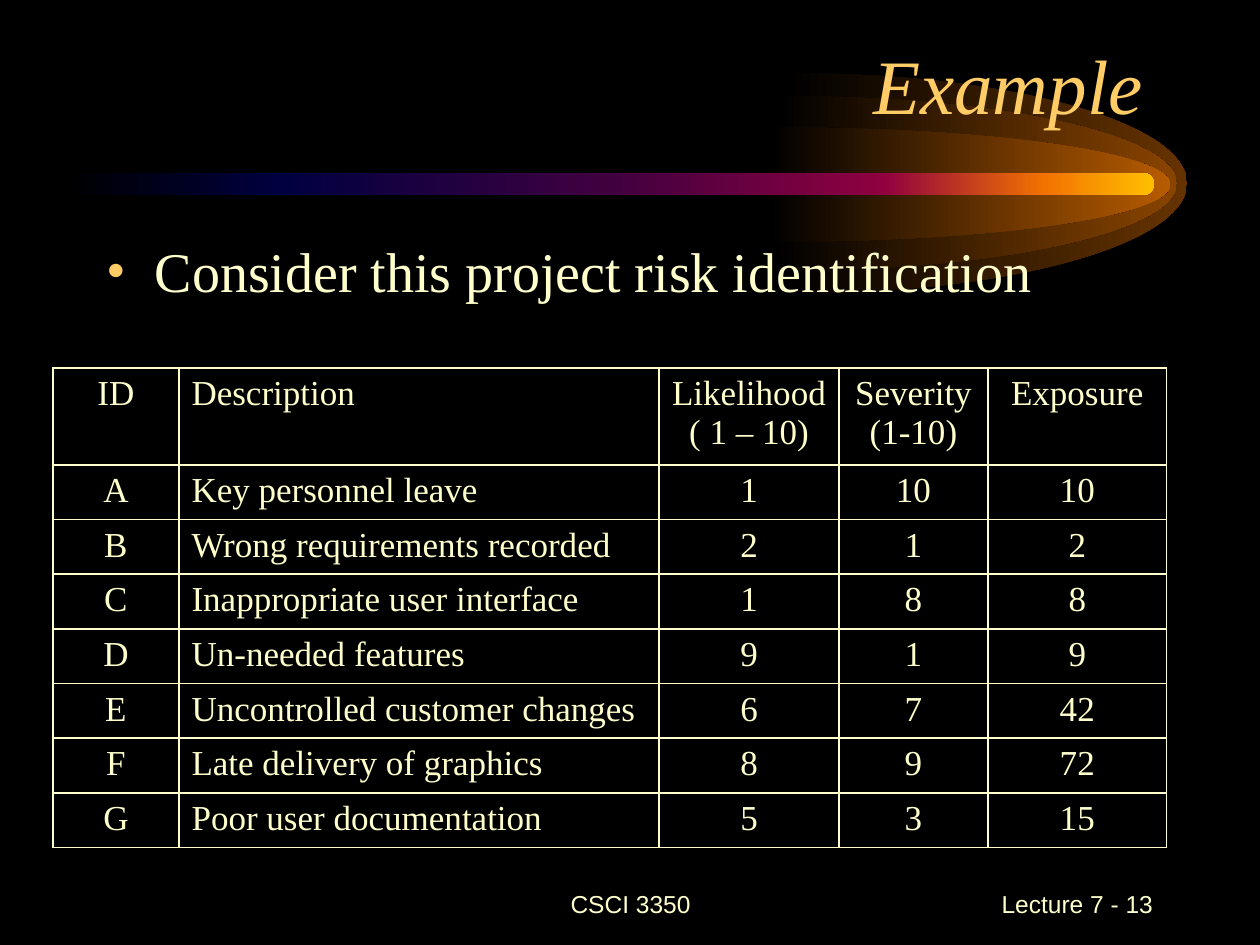
from dataclasses import dataclass

from lxml.etree import SubElement
from pptx import Presentation
from pptx.dml.color import RGBColor
from pptx.enum.shapes import MSO_SHAPE
from pptx.enum.text import MSO_ANCHOR, PP_ALIGN
from pptx.oxml.ns import qn
from pptx.util import Inches, Pt


@dataclass(frozen=True)
class Theme:
    background: str = "000000"
    text: str = "FFFFCC"
    accent: str = "FFCC66"
    halos: tuple = ("663300", "894400", "B75B00")
    beam: tuple = ((0, "000000"), (20, "000040"), (50, "400040"),
                   (75, "8F0040"), (90, "F27300"), (100, "FFBF00"))
    serif: str = "Times New Roman"
    sans: str = "Arial"
    title_size: int = 44
    body_size: int = 32
    table_size: int = 20
    footer_size: int = 14


THEME = Theme()
ELLIPSE_HANDLE = 0.55
HALO_BOXES = ((6.24, 0.58, 3.18, 1.75), (6.16, 0.76, 3.18, 1.39), (6.11, 1.01, 3.18, 0.91))
COLUMN_WIDTHS = (1, 3.81, 1.43, 1.18, 1.42)
HEADER_HEIGHT = 0.77
RISKS = (
    ("ID", "Description", "Likelihood\n( 1 – 10)", "Severity\n(1-10)", "Exposure"),
    ("A", "Key personnel leave", "1", "10", "10"),
    ("B", "Wrong requirements recorded", "2", "1", "2"),
    ("C", "Inappropriate user interface", "1", "8", "8"),
    ("D", "Un-needed features", "9", "1", "9"),
    ("E", "Uncontrolled customer changes", "6", "7", "42"),
    ("F", "Late delivery of graphics", "8", "9", "72"),
    ("G", "Poor user documentation", "5", "3", "15"),
)


def style_text(frame, size, font, color, align):
    for paragraph in frame.paragraphs:
        paragraph.alignment = align
        paragraph.font.size = Pt(size)
        paragraph.font.name = font
        paragraph.font.color.rgb = RGBColor.from_string(color)


def add_text(slide, box, text, size, font, color, align, anchor):
    frame = slide.shapes.add_textbox(*map(Inches, box)).text_frame
    frame.word_wrap = True
    frame.vertical_anchor = anchor
    frame.text = text
    style_text(frame, size, font, color, align)
    return frame.paragraphs[0]


def paint_gradient(shape, stops):
    shape.shadow.inherit = False
    shape.line.fill.background()
    shape.fill.gradient()
    shape.fill.gradient_angle = 0
    stop_list = shape.fill._xPr.find(qn("a:gradFill")).find(qn("a:gsLst"))
    stop_list.clear()
    for position, color in stops:
        stop = SubElement(stop_list, qn("a:gs"), pos=str(position * 1000))
        SubElement(stop, qn("a:srgbClr"), val=color)


def bend(segment, handles):
    end = segment[0]
    segment.tag = qn("a:cubicBezTo")
    for x, y in handles:
        end.addprevious(end.makeelement(qn("a:pt"), x=str(Inches(x)), y=str(Inches(y))))


def add_halo(slide, box, color):
    left, top, width, height = box
    notch, middle = 0.05, height / 2
    corners = ((width, middle), (notch, height), (0, height), (notch, middle))
    builder = slide.shapes.build_freeform(Inches(left + notch), Inches(top))
    builder.add_line_segments([(Inches(left + x), Inches(top + y)) for x, y in corners])
    halo = builder.convert_to_shape()
    reach_x = notch + (width - notch) * ELLIPSE_HANDLE
    reach_y = middle * ELLIPSE_HANDLE
    upper, lower = list(halo._element.iter(qn("a:lnTo")))[:2]
    bend(upper, ((reach_x, 0), (width, middle - reach_y)))
    bend(lower, ((width, middle + reach_y), (reach_x, height)))
    paint_gradient(halo, ((0, THEME.background), (100, color)))


def add_comet(slide, beam_box):
    for halo_box, color in zip(HALO_BOXES, THEME.halos):
        add_halo(slide, halo_box, color)
    beam = slide.shapes.add_shape(MSO_SHAPE.ROUNDED_RECTANGLE, *map(Inches, beam_box))
    beam.adjustments[0] = 0.5
    paint_gradient(beam, THEME.beam)


def add_title(slide, box, text):
    title = add_text(slide, box, text, THEME.title_size, THEME.serif, THEME.accent,
                     PP_ALIGN.RIGHT, MSO_ANCHOR.BOTTOM)
    title.font.italic = True


def add_bullet(slide, box, text):
    point = add_text(slide, box, text, THEME.body_size, THEME.serif, THEME.text,
                     PP_ALIGN.LEFT, MSO_ANCHOR.TOP)
    point.space_before = Pt(THEME.body_size * 0.2)
    properties = point._p.get_or_add_pPr()
    properties.set("marL", str(Inches(0.38)))
    properties.set("indent", str(Inches(-0.38)))
    bullet_color = SubElement(properties, qn("a:buClr"))
    SubElement(bullet_color, qn("a:srgbClr"), val=THEME.accent)
    SubElement(properties, qn("a:buFont"), typeface=THEME.serif)
    SubElement(properties, qn("a:buChar"), char="•")
    properties.append(properties.find(qn("a:defRPr")))


def add_borders(cell):
    properties = cell._tc.get_or_add_tcPr()
    for side in ("lnL", "lnR", "lnT", "lnB"):
        border = SubElement(properties, qn(f"a:{side}"), w=str(Pt(1)))
        fill = SubElement(border, qn("a:solidFill"))
        SubElement(fill, qn("a:srgbClr"), val=THEME.text)


def add_risk_table(slide, box):
    table = slide.shapes.add_table(len(RISKS), len(COLUMN_WIDTHS), *map(Inches, box)).table
    table.first_row = table.horz_banding = False
    for column, width in zip(table.columns, COLUMN_WIDTHS):
        column.width = Inches(width)
    risk_height = (box[3] - HEADER_HEIGHT) / (len(RISKS) - 1)
    for row_index, (row, values) in enumerate(zip(table.rows, RISKS)):
        row.height = Inches(risk_height if row_index else HEADER_HEIGHT)
        for column_index, (cell, value) in enumerate(zip(row.cells, values)):
            add_borders(cell)
            cell.fill.background()
            cell.text = value
            align = PP_ALIGN.LEFT if column_index == 1 else PP_ALIGN.CENTER
            style_text(cell.text_frame, THEME.table_size, THEME.serif, THEME.text, align)


def add_footer(slide, box, text, align):
    add_text(slide, box, text, THEME.footer_size, THEME.sans, THEME.text,
             align, MSO_ANCHOR.MIDDLE)


def main():
    deck = Presentation()
    deck.slide_width, deck.slide_height = Inches(10), Inches(7.5)
    slide = deck.slides.add_slide(deck.slide_layouts[6])
    slide.background.fill.solid()
    slide.background.fill.fore_color.rgb = RGBColor.from_string(THEME.background)
    add_comet(slide, (0.5, 1.37, 8.66, 0.18))
    add_footer(slide, (3.42, 6.92, 3.17, 0.5), "CSCI 3350", PP_ALIGN.CENTER)
    add_footer(slide, (7.17, 6.92, 2.08, 0.5), "Lecture 7 - 13", PP_ALIGN.RIGHT)
    add_title(slide, (0.67, 0.25, 8.5, 0.83), "Example")
    add_bullet(slide, (0.75, 1.83, 8.5, 4.92), "Consider this project risk identification")
    add_risk_table(slide, (0.42, 2.92, 8.83, 3.8))
    deck.save("out.pptx")


if __name__ == "__main__":
    main()
